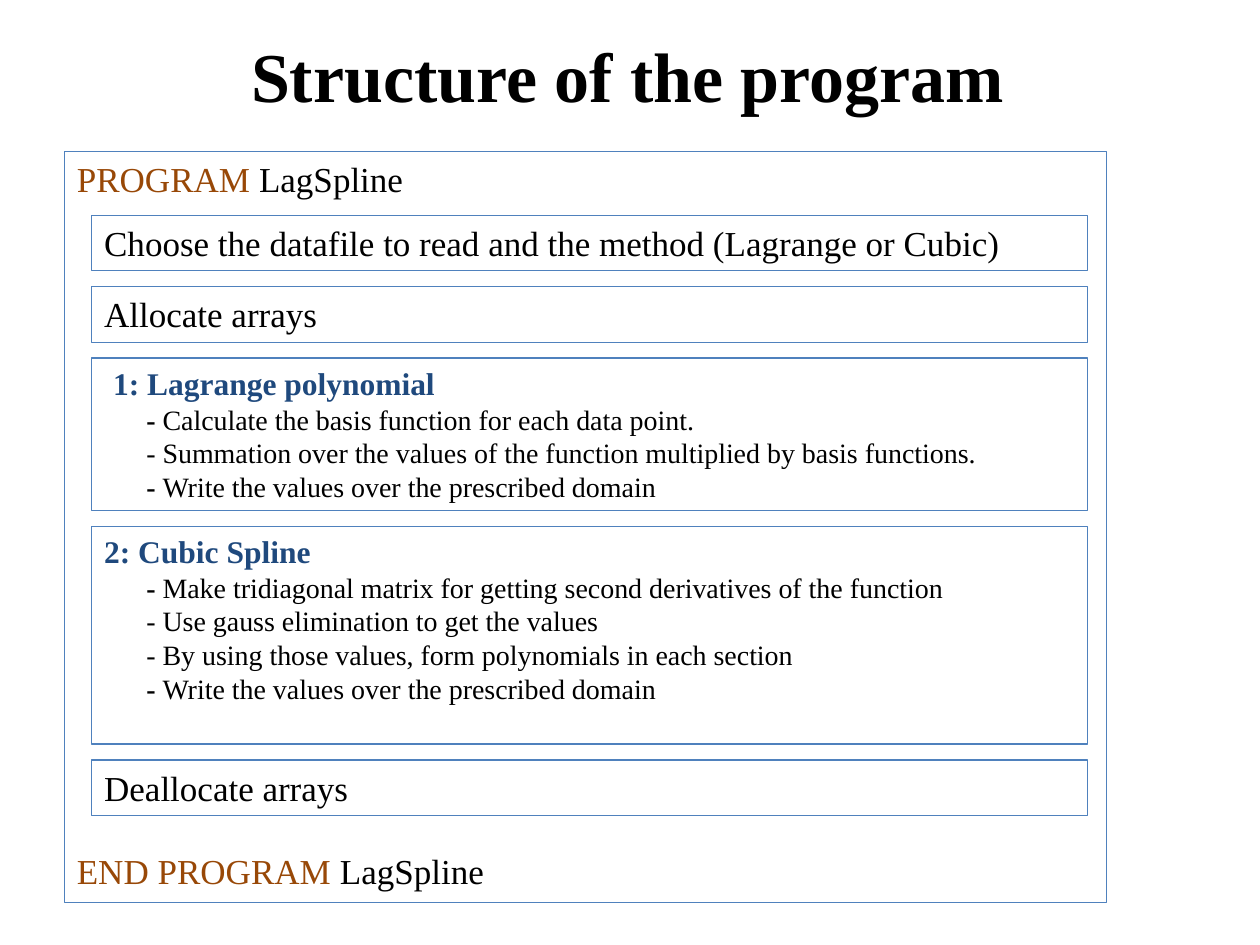
from pptx import Presentation
from pptx import util as u
from pptx.dml.color import RGBColor
from pptx.enum import shapes, text

BLACK = RGBColor(0x00, 0x00, 0x00)
BROWN = RGBColor(0x98, 0x48, 0x07)
NAVY = RGBColor(0x1F, 0x49, 0x7D)
BLUE = RGBColor(0x4F, 0x81, 0xBD)
FONT = "Times New Roman"


class Deck:
    """Holds the style and the current slide."""

    def __init__(self):
        self.prs = Presentation()
        self.prs.slide_width, self.prs.slide_height = u.Cm(25.4), u.Cm(19.05)
        self.slide = self.prs.slides.add_slide(self.prs.slide_layouts[6])

    def title(self, words, left, top, width, height):
        box = self.slide.shapes.add_textbox(*map(u.Cm, (left, top, width, height)))
        box.text_frame.word_wrap = True
        par = self.line(box, [(words, BLACK, True)], 40)
        par.alignment = text.PP_ALIGN.CENTER

    def box(self, left, top, width, height):
        rect = self.slide.shapes.add_shape(
            shapes.MSO_SHAPE.RECTANGLE, *map(u.Cm, (left, top, width, height)))
        rect.shadow.inherit = False
        rect.fill.background()
        rect.line.color.rgb = BLUE
        rect.line.width = u.Pt(0.75)
        rect.text_frame.word_wrap = True
        rect.text_frame.vertical_anchor = text.MSO_ANCHOR.TOP
        return rect

    def line(self, shape, runs, size, indent=0, before=0):
        """Add one paragraph of (words, colour, bold) runs."""
        frame = shape.text_frame
        par = frame.paragraphs[0]
        if par.runs:
            par = frame.add_paragraph()
        par.alignment = text.PP_ALIGN.LEFT
        par.space_before = u.Pt(before)
        par._p.get_or_add_pPr().set("marL", str(u.Cm(indent)))
        for words, color, bold in runs:
            run = par.add_run()
            run.text = words
            run.font.name = FONT
            run.font.size = u.Pt(size)
            run.font.bold = bold
            run.font.color.rgb = color
        return par

    def save(self):
        self.prs.save("out.pptx")


# Steps: height, heading, heading indent, items as (bold dash, words)
STEPS = [
    (1.12, "Choose the datafile to read and the method (Lagrange or Cubic)", 0, []),
    (1.12, "Allocate arrays", 0, []),
    (3.07, "1: Lagrange polynomial", 0.18, [
        (True, "Calculate the basis function for each data point."),
        (False, "Summation over the values of the function multiplied by basis functions."),
        (True, "Write the values over the prescribed domain"),
    ]),
    (4.39, "2: Cubic Spline", 0, [
        (True, "Make tridiagonal matrix for getting second derivatives of the function"),
        (False, "Use gauss elimination to get the values"),
        (False, "By using those values, form polynomials in each section"),
        (True, "Write the values over the prescribed domain"),
    ]),
    (1.12, "Deallocate arrays", 0, []),
]
GAP = 0.32


def main():
    deck = Deck()
    deck.title("Structure of the program", -0.05, 0.53, 25.4, 1.96)

    # Program frame
    frame = deck.box(1.3, 3.06, 21.01, 15.13)
    deck.line(frame, [("PROGRAM", BROWN, False), (" LagSpline", BLACK, False)], 20)
    deck.line(frame, [("END PROGRAM ", BROWN, False), ("LagSpline", BLACK, False)],
              20, before=371)

    # Stacked steps
    top = 4.34
    for height, head, indent, items in STEPS:
        step = deck.box(1.85, top, 20.07, height)
        if items:
            deck.line(step, [(head, NAVY, True)], 18, indent)
        else:
            deck.line(step, [(head, BLACK, False)], 20)
        for bold, words in items:
            deck.line(step, [("- ", BLACK, bold), (words, BLACK, False)], 16, 0.85)
        top += height + GAP

    deck.save()


if __name__ == "__main__":
    main()
